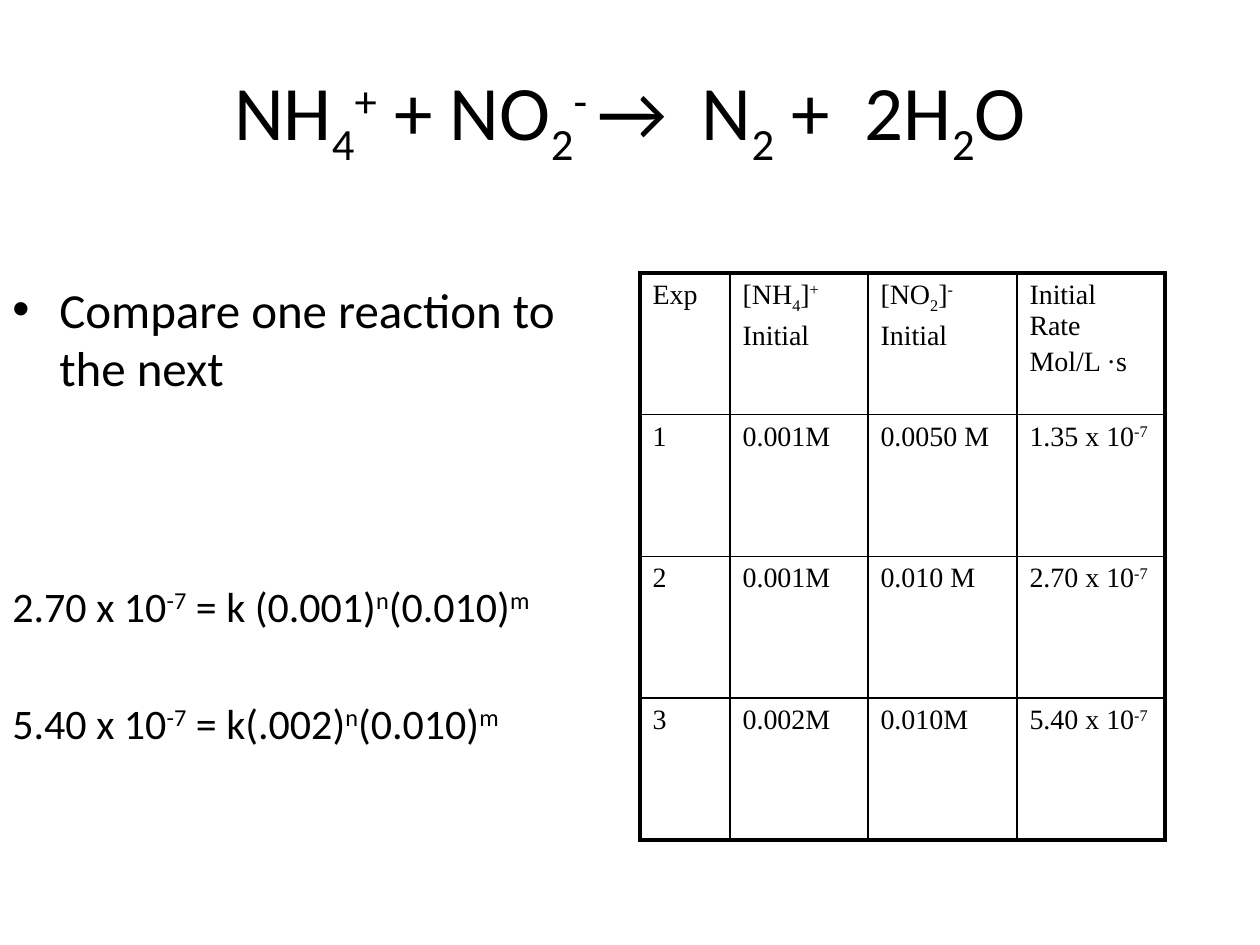
from dataclasses import dataclass

from lxml import etree
from pptx import Presentation
from pptx import util as u
from pptx.dml.color import RGBColor
from pptx.enum import text
from pptx.oxml import ns

SCALE = 914400 / 126


@dataclass(frozen=True)
class Theme:
    ink: RGBColor = RGBColor(0, 0, 0)
    sans: str = "Calibri"
    serif: str = "Times New Roman"
    title: int = 44
    lead: int = 28
    body: int = 24
    cell: int = 16
    gap: int = 3
    thin: float = 1
    thick: float = 2.25


def px(n):
    return u.Emu(round(n * SCALE))


class Deck:
    def __init__(self, theme):
        self.theme = theme
        self.prs = Presentation()
        self.prs.slide_width, self.prs.slide_height = px(1260), px(945)
        self.slide = self.prs.slides.add_slide(self.prs.slide_layouts[5])

    def runs(self, para, line, size, face):
        """Add runs split at "|"; a leading "_" lowers a run, "^" raises it."""
        for part in line.split("|"):
            shift = {"_": -25000, "^": 30000}.get(part[0])
            run = para.add_run()
            run.text = part[1:] if shift else part
            font = run.font
            font.name, font.size = face, u.Pt(size)
            font.color.rgb = self.theme.ink
            if shift:
                run._r.get_or_add_rPr().set("baseline", str(shift))

    def title(self, box, line):
        shape = self.slide.shapes.title
        shape.left, shape.top, shape.width, shape.height = map(px, box)
        frame = shape.text_frame
        frame.auto_size = text.MSO_AUTO_SIZE.NONE
        frame.vertical_anchor = text.MSO_ANCHOR.MIDDLE
        para = frame.paragraphs[0]
        para.alignment = text.PP_ALIGN.CENTER
        self.runs(para, line, self.theme.title, self.theme.sans)

    def bullet(self, para, indent):
        props = para._p.get_or_add_pPr()
        props.set("marL", str(px(indent)))
        props.set("indent", str(-px(indent)))
        etree.SubElement(props, ns.qn("a:buFont"), typeface="Arial")
        etree.SubElement(props, ns.qn("a:buChar"), char="•")

    def body(self, box, lead, sums):
        """Place a bulleted lead, then (space before, equation) pairs."""
        frame = self.slide.shapes.add_textbox(*map(px, box)).text_frame
        frame.word_wrap = True
        para = frame.paragraphs[0]
        self.bullet(para, 47)
        self.runs(para, lead, self.theme.lead, self.theme.sans)
        for space, line in sums:
            para = frame.add_paragraph()
            para.space_before = u.Pt(space)
            self.runs(para, line, self.theme.body, self.theme.sans)

    def edge(self, cell, side, width):
        props = cell._tc.get_or_add_tcPr()
        line = etree.SubElement(props, ns.qn("a:ln" + side), w=str(u.Pt(width)))
        fill = etree.SubElement(line, ns.qn("a:solidFill"))
        etree.SubElement(fill, ns.qn("a:srgbClr"), val=str(self.theme.ink))

    def table(self, box, cols, rows):
        look = self.theme
        high, wide = len(rows), len(cols)
        grid = self.slide.shapes.add_table(high, wide, *map(px, box)).table
        grid.first_row = grid.horz_banding = False
        for col, width in zip(grid.columns, cols):
            col.width = px(width)
        for r, row in enumerate(rows):
            for c, lines in enumerate(row):
                cell = grid.cell(r, c)
                outer = {"L": c == 0, "R": c == wide - 1,
                         "T": r == 0, "B": r == high - 1}
                for side, rim in outer.items():
                    self.edge(cell, side, look.thick if rim else look.thin)
                cell.fill.background()
                frame = cell.text_frame
                for i, line in enumerate(lines.split("\n")):
                    para = frame.add_paragraph() if i else frame.paragraphs[0]
                    para.space_before = u.Pt(look.gap)
                    self.runs(para, line, look.cell, look.serif)


def main():
    deck = Deck(Theme())
    deck.title((63, 38, 1134, 157),
               "NH|_4|^+| + NO|_2|^- |→  N|_2| +  2H|_2|O")
    deck.body((0, 273, 620, 567), "Compare one reaction to the next", [
        (105, "2.70 x 10|^-7| = k (0.001)|^n|(0.010)|^m"),
        (38, "5.40 x 10|^-7| = k(.002)|^n|(0.010)|^m"),
    ])
    deck.table((640, 273, 525, 567), (90, 138, 149, 148), [
        ("Exp", "[NH|_4|]|^+\nInitial", "[NO|_2|]|^-\nInitial",
         "Initial Rate\nMol/L ·s"),
        ("1", "0.001M", "0.0050 M", "1.35 x 10|^-7"),
        ("2", "0.001M", "0.010 M", "2.70 x 10|^-7"),
        ("3", "0.002M", "0.010M", "5.40 x 10|^-7"),
    ])
    deck.prs.save("out.pptx")


if __name__ == "__main__":
    main()
